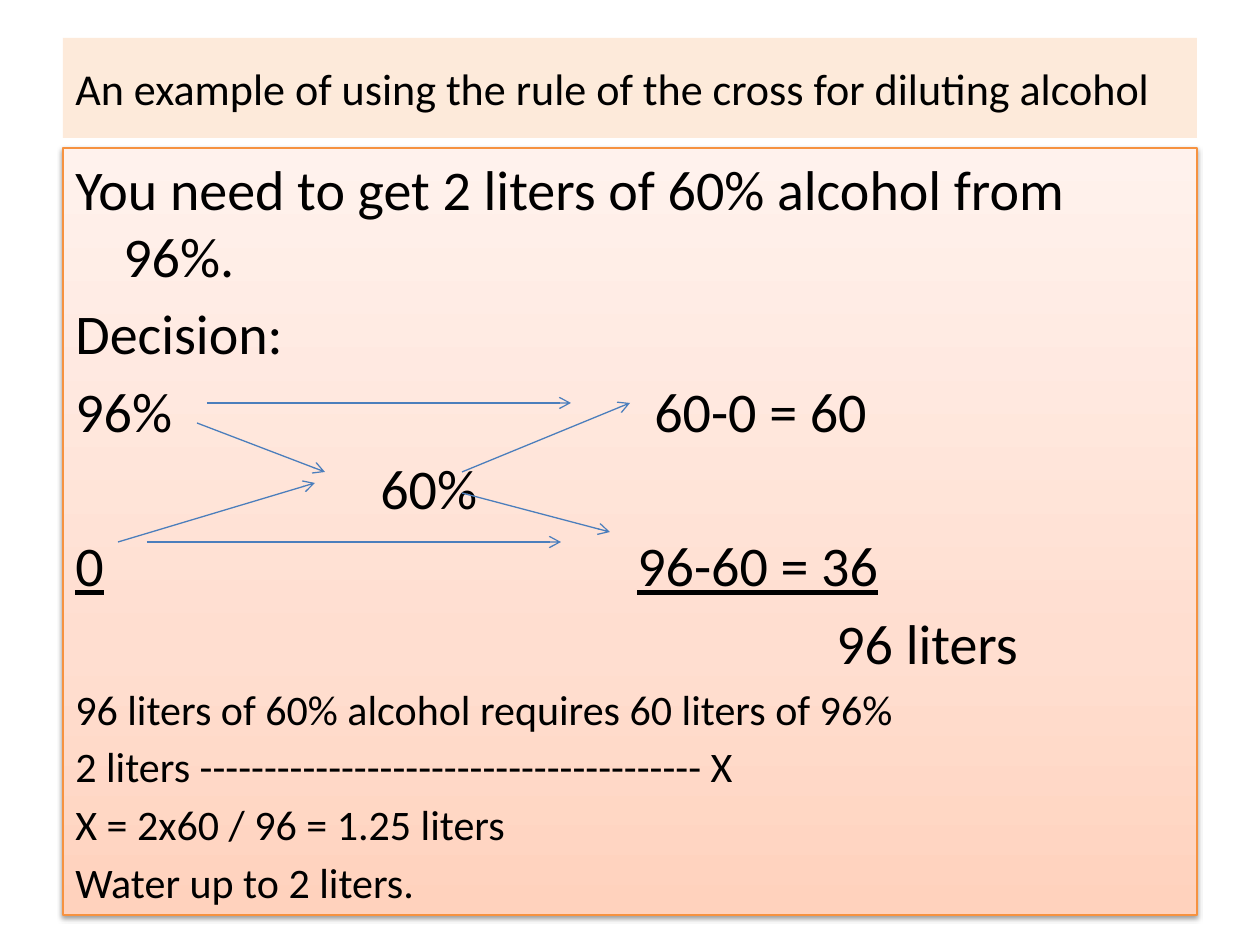
import copy
from dataclasses import dataclass

import lxml.etree
import pptx
import pptx.dml.color
import pptx.enum.shapes
import pptx.enum.text
import pptx.oxml.ns
import pptx.util

PX = 914400 / 126
qn = pptx.oxml.ns.qn
rgb = pptx.dml.color.RGBColor.from_string


@dataclass(frozen=True)
class Theme:
    font: str = "Calibri"
    text: str = "000000"
    title_fill: str = "FDEADA"
    body_stops: tuple = ((0, "FFD2BD"), (0.35, "FFDED0"), (1, "FFF2ED"))
    body_line: str = "F69240"
    arrow: str = "4B7EBC"
    title_size: float = 25.2
    task_size: float = 32
    answer_size: float = 24
    line_width: float = 0.75
    space_ratio: float = 0.18


THEME = Theme()
HANG = 48

TITLE = "An example of using the rule of the cross for diluting alcohol"

# Text, tab stop in px from the text edge, extra format values
TASK = [
    ("You need to get 2 liters of 60% alcohol from 96%.", None, {}),
    ("Decision:", None, {}),
    ("96%\t60-0 = 60", 579, {}),
    ("\t60%", 305, {}),
    ("0\t96-60 = 36", 562, {"underline": True}),
    ("\t96 liters", 761, {}),
]
ANSWER = [
    "96 liters of 60% alcohol requires 60 liters of 96%",
    "2 liters --------------------------------------- X",
    "X = 2x60 / 96 = 1.25 liters",
    "Water up to 2 liters.",
]
ARROWS = [
    (197, 423, 325, 472),
    (462, 493, 610, 532),
    (118, 542, 315, 483),
    (462, 472, 630, 403),
    (207, 403, 571, 403),
    (147, 542, 561, 542),
]


def px(n):
    return pptx.util.Emu(round(n * PX))


def add_xml(parent, tag, **attrs):
    values = {k: str(v) for k, v in attrs.items()}
    return lxml.etree.SubElement(parent, qn(tag), values)


def set_values(target, values):
    for name, value in values.items():
        setattr(target, name, value)


def add_panel(slide, box, anchor):
    sp = slide.shapes.add_shape(
        pptx.enum.shapes.MSO_SHAPE.RECTANGLE, *map(px, box))
    sp.shadow.inherit = False
    set_values(sp.text_frame, {"word_wrap": True, "vertical_anchor": anchor})
    return sp


def fill_gradient(fill, stops):
    """Fill from bottom to top with three stops."""
    fill.gradient()
    fill.gradient_angle = 90
    first = fill.gradient_stops[0]._gs
    first.addnext(copy.deepcopy(first))
    for stop, (position, color) in zip(fill.gradient_stops, stops):
        stop.position = position
        stop.color.rgb = rgb(color)


def add_shadow(sp):
    effects = sp._element.spPr.find(qn("a:effectLst"))
    shadow = add_xml(effects, "a:outerShdw", blurRad=pptx.util.Pt(3.1),
                     dist=pptx.util.Pt(1.6), dir=90 * 60000, rotWithShape=0)
    color = add_xml(shadow, "a:srgbClr", val="000000")
    add_xml(color, "a:alpha", val=38000)


def set_line(line, color):
    line.color.rgb = rgb(color)
    line.width = pptx.util.Pt(THEME.line_width)


def add_text(tf, text, size, first=False, tab=None, extra=None):
    p = tf.paragraphs[0] if first else tf.add_paragraph()
    p.alignment = pptx.enum.text.PP_ALIGN.LEFT
    p.space_before = pptx.util.Pt(0 if first else round(size * THEME.space_ratio, 1))
    if tab:
        tabs = add_xml(p._p.get_or_add_pPr(), "a:tabLst")
        add_xml(tabs, "a:tab", pos=px(tab), algn="l")
    r = p.add_run()
    r.text = text
    values = {"name": THEME.font, "size": pptx.util.Pt(size)}
    set_values(r.font, {**values, **(extra or {})})
    r.font.color.rgb = rgb(THEME.text)
    return p


def add_title(slide):
    sp = add_panel(slide, (63, 38, 1134, 100), pptx.enum.text.MSO_ANCHOR.MIDDLE)
    sp.fill.solid()
    sp.fill.fore_color.rgb = rgb(THEME.title_fill)
    sp.line.fill.background()
    add_text(sp.text_frame, TITLE, THEME.title_size, first=True)


def add_body(slide):
    sp = add_panel(slide, (63, 148, 1134, 767), pptx.enum.text.MSO_ANCHOR.TOP)
    fill_gradient(sp.fill, THEME.body_stops)
    set_line(sp.line, THEME.body_line)
    add_shadow(sp)
    for i, (text, tab, extra) in enumerate(TASK):
        p = add_text(sp.text_frame, text, THEME.task_size, i == 0, tab, extra)
        if i == 0:
            pPr = p._p.get_or_add_pPr()
            pPr.set("marL", str(px(HANG)))
            pPr.set("indent", str(px(-HANG)))
    for text in ANSWER:
        add_text(sp.text_frame, text, THEME.answer_size)


def add_arrow(slide, ends):
    cxn = slide.shapes.add_connector(
        pptx.enum.shapes.MSO_CONNECTOR.STRAIGHT, *map(px, ends))
    set_line(cxn.line, THEME.arrow)
    spPr = cxn._element.spPr
    add_xml(spPr.find(qn("a:ln")), "a:tailEnd", type="arrow")
    add_xml(spPr, "a:effectLst")


def main():
    prs = pptx.Presentation()
    prs.slide_width, prs.slide_height = px(1260), px(945)
    slide = prs.slides.add_slide(prs.slide_layouts[6])
    add_title(slide)
    add_body(slide)
    for ends in ARROWS:
        add_arrow(slide, ends)
    prs.save("out.pptx")


if __name__ == "__main__":
    main()
